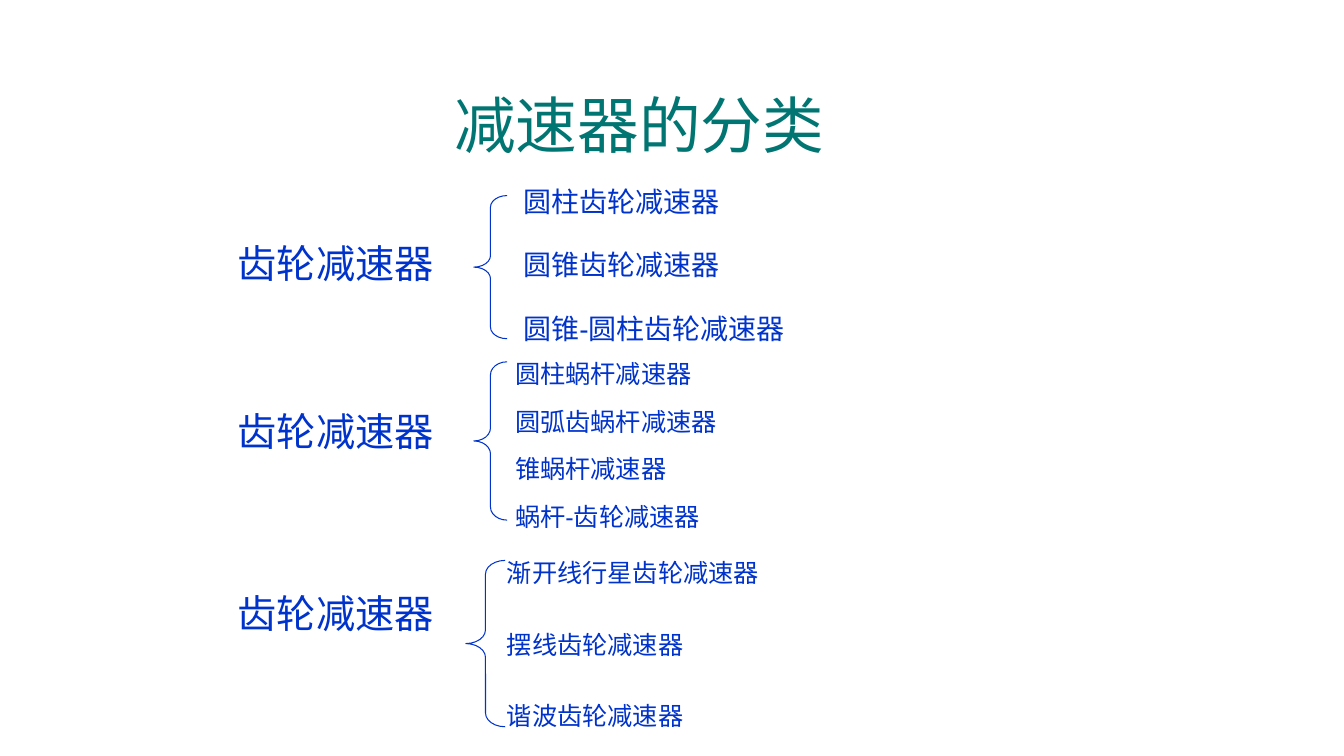
"""Build a slide that sorts speed reducers into three braced groups."""
from pptx import Presentation
from pptx.dml.color import RGBColor
from pptx.enum.lang import MSO_LANGUAGE_ID
from pptx.enum.shapes import MSO_SHAPE
from pptx.enum.text import MSO_ANCHOR, PP_ALIGN
from pptx.util import Pt

PX = 9144
TEAL = RGBColor(0x00, 0x75, 0x72)
BLUE = RGBColor(0x00, 0x33, 0xCC)

deck = Presentation()
deck.slide_width = 1333 * PX
deck.slide_height = 750 * PX
page = deck.slides.add_slide(deck.slide_layouts[6])


def add_text(text, left, top, width, height, size, color=BLUE,
             align=PP_ALIGN.LEFT, anchor=MSO_ANCHOR.TOP):
    box = page.shapes.add_textbox(left * PX, top * PX, width * PX, height * PX)
    frame = box.text_frame
    frame.word_wrap = True
    frame.vertical_anchor = anchor
    para = frame.paragraphs[0]
    para.alignment = align
    span = para.add_run()
    span.text = text
    span.font.name = "Arial"
    span.font.size = Pt(size)
    span.font.color.rgb = color
    span.font.language_id = MSO_LANGUAGE_ID.SIMPLIFIED_CHINESE


add_text("减速器的分类", 167, 60, 934, 125, 44, color=TEAL,
         align=PP_ALIGN.CENTER, anchor=MSO_ANCHOR.MIDDLE)

groups = [
    {
        "heading": ("齿轮减速器", 233),
        "brace": (470, 194, 33, 142), "curve": 0.35,
        "left": 509, "top": 178, "step": 63, "width": 339, "height": 44, "size": 20,
        "items": ["圆柱齿轮减速器", "圆锥齿轮减速器", "圆锥-圆柱齿轮减速器"],
    },
    {
        "heading": ("齿轮减速器", 399),
        "brace": (470, 359, 33, 157), "curve": 0.39,
        "left": 501, "top": 351, "step": 47, "width": 307, "height": 40, "size": 18,
        "items": ["圆柱蜗杆减速器", "圆弧齿蜗杆减速器", "锥蜗杆减速器", "蜗杆-齿轮减速器"],
    },
    {
        "heading": ("齿轮减速器", 580),
        "brace": (462, 556, 39, 165), "curve": 0.35,
        "left": 493, "top": 548, "step": 71, "width": 307, "height": 40, "size": 18,
        "items": ["渐开线行星齿轮减速器", "摆线齿轮减速器", "谐波齿轮减速器"],
    },
]

for group in groups:
    heading, heading_top = group["heading"]
    add_text(heading, 226, heading_top, 228, 57, 28)

    brace = page.shapes.add_shape(MSO_SHAPE.LEFT_BRACE, *(n * PX for n in group["brace"]))
    brace.shadow.inherit = False
    brace.fill.background()
    brace.line.color.rgb = BLUE
    brace.line.width = Pt(0.75)
    brace.adjustments[0] = group["curve"]
    brace.adjustments[1] = 0.5

    for row, item in enumerate(group["items"]):
        add_text(item, group["left"], group["top"] + row * group["step"],
                 group["width"], group["height"], group["size"])

deck.save("out.pptx")
